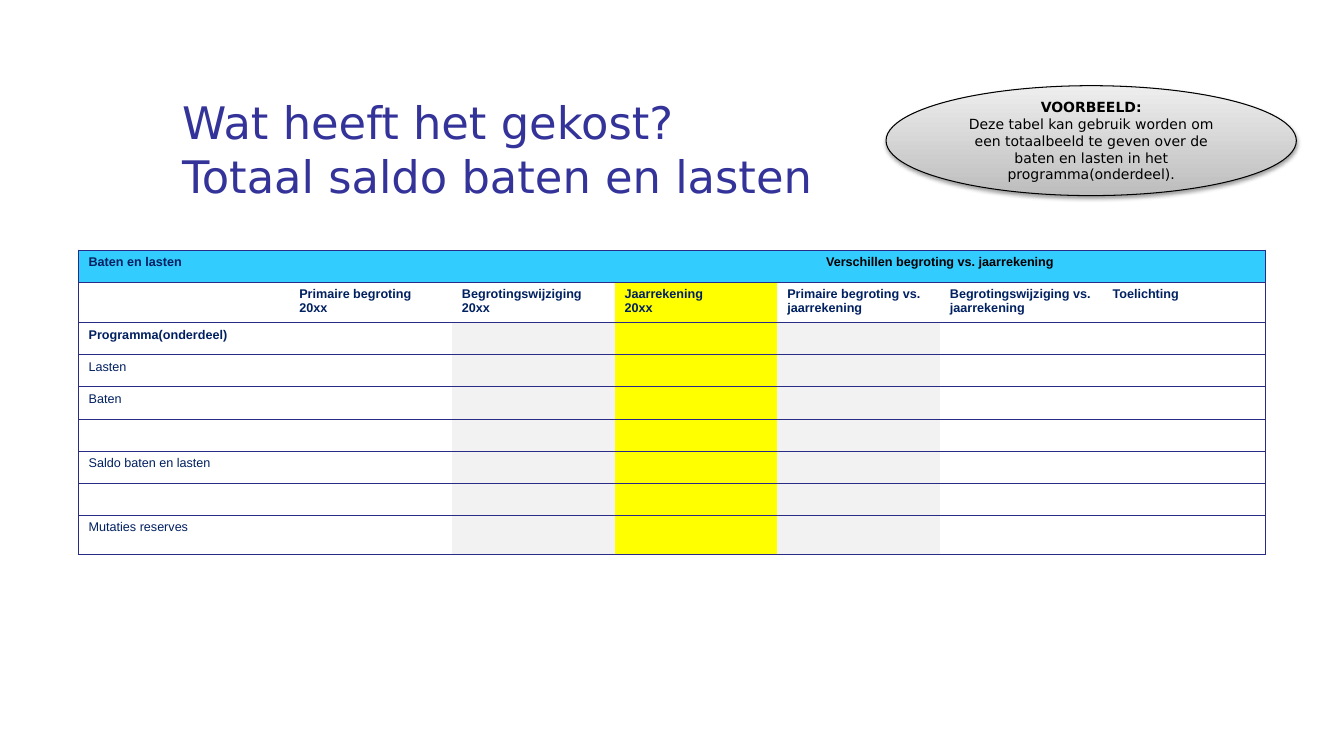
from lxml.etree import SubElement
from pptx import Presentation
from pptx.dml.color import RGBColor
from pptx.enum.shapes import MSO_SHAPE
from pptx.enum.text import MSO_ANCHOR, PP_ALIGN
from pptx.oxml.ns import qn
from pptx.util import Cm, Pt

NAVY, BLACK, BORDER = "002060", "000000", "2A2A89"
CYAN, YELLOW, GREY = "33CCFF", "FFFF00", "F2F2F2"

COLUMN_WIDTHS = [5.31] + [4.1] * 6
ROW_HEIGHTS = [0.81, 0.96] + [0.81] * 6 + [0.98]
COLUMN_FILLS = {2: GREY, 3: YELLOW, 4: GREY}
COLUMN_HEADS = ["", "Primaire begroting 20xx", "Begrotingswijziging\n20xx",
                "Jaarrekening\n20xx", "Primaire begroting vs. jaarrekening",
                "Begrotingswijziging vs. jaarrekening", "Toelichting"]
ROW_HEADS = ["Programma(onderdeel)", "Lasten", "Baten", "",
             "Saldo baten en lasten", "", "Mutaties reserves"]


def color(value):
    return RGBColor.from_string(value)


def style(para, name, size, hue, bold=False, align=PP_ALIGN.LEFT):
    para.alignment = align
    font = para.font
    font.name, font.size, font.bold = name, Pt(size), bold
    font.color.rgb = color(hue)


def add_title(page, text):
    box = page.shapes.add_textbox(Cm(4.34), Cm(2.16), Cm(28.35), Cm(3.18))
    frame = box.text_frame
    frame.word_wrap = True
    frame.vertical_anchor = MSO_ANCHOR.MIDDLE
    para = frame.paragraphs[0]
    para.text = text
    style(para, "DejaVu Sans", 32, "333399")


def add_shadow(shape):
    shape.shadow.inherit = False
    effects = shape._element.spPr.find(qn("a:effectLst"))
    shadow = SubElement(effects, qn("a:outerShdw"), blurRad=str(Pt(3.1)),
                        dist=str(Pt(1.6)), dir="5400000", rotWithShape="0")
    tint = SubElement(shadow, qn("a:srgbClr"), val=BLACK)
    SubElement(tint, qn("a:alpha"), val="38000")


def add_callout(page, heading, text):
    oval = page.shapes.add_shape(MSO_SHAPE.OVAL, Cm(22.33), Cm(2.16), Cm(10.34), Cm(2.77))
    oval.fill.gradient()
    oval.fill.gradient_angle = 90
    for stop, hue in zip(oval.fill.gradient_stops, ["BDBDBD", "EEEEEE"]):
        stop.color.rgb = color(hue)
    oval.line.color.rgb = color(BLACK)
    oval.line.width = Pt(0.75)
    add_shadow(oval)
    frame = oval.text_frame
    frame.word_wrap = True
    frame.vertical_anchor = MSO_ANCHOR.MIDDLE
    frame.text = f"{heading}\n{text}"
    for para, bold in zip(frame.paragraphs, [True, False]):
        style(para, "DejaVu Sans", 10, BLACK, bold, PP_ALIGN.CENTER)


def set_borders(cell, visible):
    properties = cell._tc.get_or_add_tcPr()
    for side in "LRTB":
        line = SubElement(properties, qn(f"a:ln{side}"), w=str(Pt(0.75)))
        if side in visible:
            paint = SubElement(line, qn("a:solidFill"))
            SubElement(paint, qn("a:srgbClr"), val=BORDER)
        else:
            SubElement(line, qn("a:noFill"))


def fill_cell(cell, text, fill, bold, hue=NAVY, align=PP_ALIGN.LEFT):
    if fill:
        cell.fill.solid()
        cell.fill.fore_color.rgb = color(fill)
    else:
        cell.fill.background()
    cell.text_frame.text = text
    for para in cell.text_frame.paragraphs:
        style(para, "Arial", 9, hue, bold, align)
        if not text:  # keeps empty rows low
            para._p.get_or_add_endParaRPr().set("sz", "900")


def add_budget_table(page):
    rows, columns = len(ROW_HEIGHTS), len(COLUMN_WIDTHS)
    table = page.shapes.add_table(rows, columns, Cm(1.98), Cm(6.3),
                                  Cm(sum(COLUMN_WIDTHS)), Cm(sum(ROW_HEIGHTS))).table
    table.first_row = table.horz_banding = False
    for column, width in zip(table.columns, COLUMN_WIDTHS):
        column.width = Cm(width)
    for row, height in zip(table.rows, ROW_HEIGHTS):
        row.height = Cm(height)

    # Lines between rows and around the table
    for r in range(rows):
        for c in range(columns):
            sides = "TB" + ("L" if c == 0 else "") + ("R" if c == columns - 1 else "")
            set_borders(table.cell(r, c), sides)

    # Band with two merged headings
    for c in range(columns):
        fill_cell(table.cell(0, c), "", CYAN, True)
    fill_cell(table.cell(0, 0), "Baten en lasten", CYAN, True)
    fill_cell(table.cell(0, 4), "Verschillen begroting vs. jaarrekening", CYAN, True,
              BLACK, PP_ALIGN.CENTER)
    table.cell(0, 0).merge(table.cell(0, 3))
    table.cell(0, 4).merge(table.cell(0, 5))

    # Column headings
    for c, text in enumerate(COLUMN_HEADS):
        fill_cell(table.cell(1, c), text, YELLOW if c == 3 else None, True)

    # Body
    for r, head in enumerate(ROW_HEADS, start=2):
        for c in range(columns):
            fill_cell(table.cell(r, c), head if c == 0 else "", COLUMN_FILLS.get(c), r == 2)


def main():
    deck = Presentation()
    deck.slide_width, deck.slide_height = Cm(33.87), Cm(19.05)
    page = deck.slides.add_slide(deck.slide_layouts[6])
    add_title(page, "Wat heeft het gekost?\vTotaal saldo baten en lasten")
    add_budget_table(page)
    add_callout(page, "VOORBEELD:",
                "Deze tabel kan gebruik worden om een totaalbeeld te geven "
                "over de baten en lasten in het programma(onderdeel).")
    deck.save("out.pptx")


if __name__ == "__main__":
    main()
